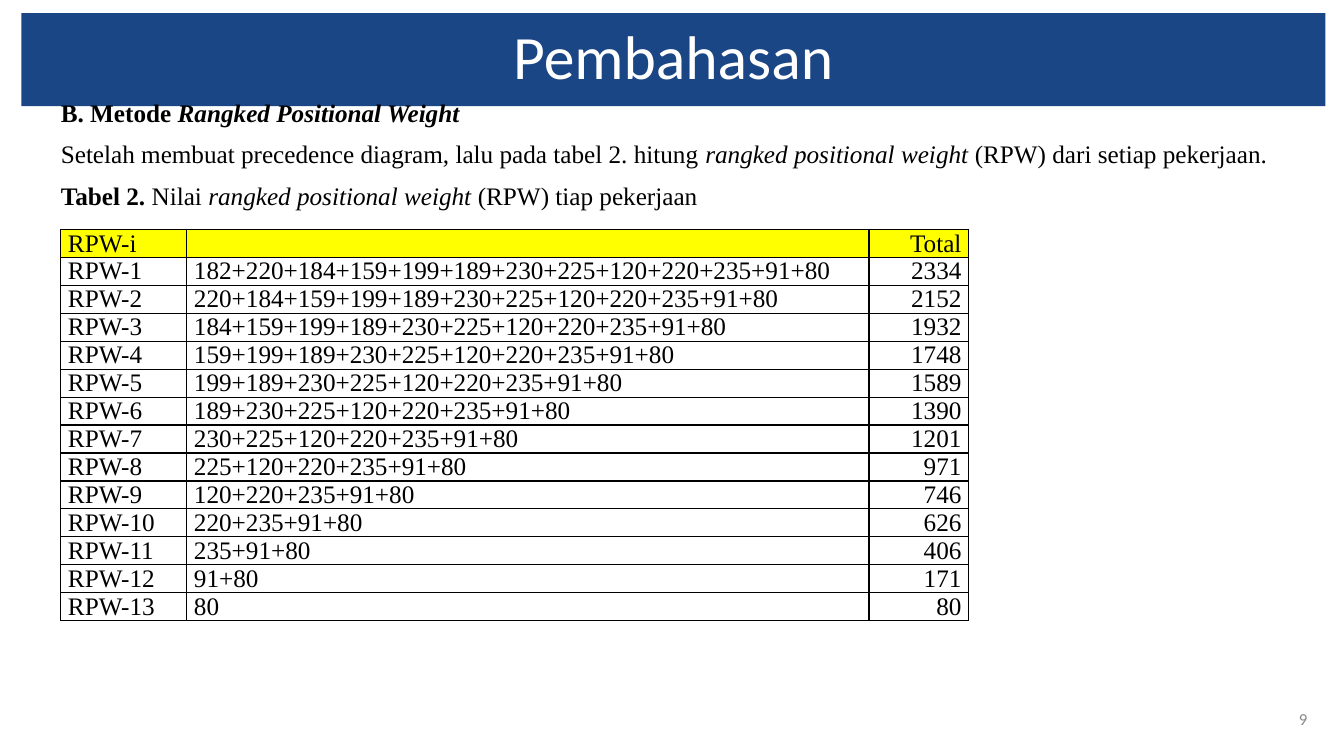
from lxml.etree import SubElement
from pptx import Presentation
from pptx.dml.color import RGBColor
from pptx.enum.text import MSO_ANCHOR, MSO_AUTO_SIZE, PP_ALIGN
from pptx.oxml.ns import qn
from pptx.util import Pt

COLORS = {"banner": "1B4685", "header": "FFFF00", "paper": "FFFFFF",
          "ink": "000000", "number": "888888"}
SERIF, SANS = "Times New Roman", "Calibri"
TASK_TIMES = [182, 220, 184, 159, 199, 189, 230, 225, 120, 220, 235, 91, 80]
INTRO = [
    [("B. Metode ", True, False), ("Rangked Positional Weight", True, True)],
    [("Setelah membuat precedence diagram, lalu pada tabel 2. hitung ", False, False),
     ("rangked positional weight ", False, True),
     ("(RPW) dari setiap pekerjaan.", False, False)],
    [("Tabel 2.", True, False), (" Nilai ", False, False),
     ("rangked positional weight ", False, True),
     ("(RPW) tiap pekerjaan", False, False)],
]


def rgb(name):
    """Return the named colour."""
    return RGBColor.from_string(COLORS[name])


def add_run(p, text, font, size, color, bold=False, italic=False):
    """Append one formatted run to a paragraph."""
    r = p.add_run()
    r.text = text
    r.font.name, r.font.size = font, Pt(size)
    r.font.bold, r.font.italic = bold, italic
    r.font.color.rgb = rgb(color)


def place(sp, x, y, w, h, anchor):
    """Move a text shape to its box and return its text frame."""
    sp.left, sp.top, sp.width, sp.height = Pt(x), Pt(y), Pt(w), Pt(h)
    tf = sp.text_frame
    tf.word_wrap = True
    tf.auto_size = MSO_AUTO_SIZE.NONE
    tf.vertical_anchor = anchor
    return tf


def add_title(s, x, y, w, h):
    """Set the title as a full-width banner."""
    sp = s.shapes.title
    sp.fill.solid()
    sp.fill.fore_color.rgb = rgb("banner")
    p = place(sp, x, y, w, h, MSO_ANCHOR.MIDDLE).paragraphs[0]
    p.alignment, p.line_spacing = PP_ALIGN.CENTER, 0.9
    add_run(p, "Pembahasan", SANS, 44, "paper")


def add_intro(s, x, y, w, h):
    """Fill the body placeholder with the method text and table caption."""
    tf = place(s.placeholders[1], x, y, w, h, MSO_ANCHOR.TOP)
    for i, runs in enumerate(INTRO):
        p = tf.add_paragraph() if i else tf.paragraphs[0]
        pPr = p._p.get_or_add_pPr()
        pPr.set("marL", str(Pt(21)))
        pPr.set("indent", "0")
        SubElement(pPr, qn("a:buNone"))
        p.line_spacing = 0.9
        p.space_before = Pt(10 if i else 0)
        for text, bold, italic in runs:
            add_run(p, text, SERIF, 18, "ink", bold, italic)


def add_borders(cell):
    """Draw thin lines on all four sides of a cell."""
    tcPr = cell._tc.get_or_add_tcPr()
    for i, side in enumerate(("lnL", "lnR", "lnT", "lnB")):
        ln = tcPr.makeelement(qn(f"a:{side}"), {"w": str(Pt(1))})
        fill = SubElement(ln, qn("a:solidFill"))
        SubElement(fill, qn("a:srgbClr"), val=COLORS["ink"])
        tcPr.insert(i, ln)


def add_weights(s, x, y, widths, row_h):
    """Add the table of positional weights, each a sum of the remaining times."""
    rows = [("RPW-i", "", "Total")]
    for i in range(len(TASK_TIMES)):
        rest = TASK_TIMES[i:]
        rows.append((f"RPW-{i + 1}", "+".join(map(str, rest)), str(sum(rest))))
    table = s.shapes.add_table(len(rows), len(widths), Pt(x), Pt(y),
                               Pt(sum(widths)), Pt(row_h * len(rows))).table
    table.first_row = table.horz_banding = False
    for col, width in zip(table.columns, widths):
        col.width = Pt(width)
    for i, row in enumerate(rows):
        table.rows[i].height = Pt(row_h)
        for j, text in enumerate(row):
            cell = table.cell(i, j)
            cell.margin_left = cell.margin_right = Pt(5.25)
            cell.margin_top = cell.margin_bottom = 0
            cell.vertical_anchor = MSO_ANCHOR.BOTTOM
            cell.fill.solid()
            cell.fill.fore_color.rgb = rgb("paper" if i else "header")
            add_borders(cell)
            p = cell.text_frame.paragraphs[0]
            p.alignment = PP_ALIGN.RIGHT if j == 2 else PP_ALIGN.LEFT
            add_run(p, text, SERIF, 18, "ink")


def add_page_number(s, x, y, w, h):
    """Add the slide number at the lower right."""
    sp = s.shapes.add_textbox(Pt(x), Pt(y), Pt(w), Pt(h))
    p = place(sp, x, y, w, h, MSO_ANCHOR.MIDDLE).paragraphs[0]
    p.alignment = PP_ALIGN.RIGHT
    add_run(p, "9", SANS, 12, "number")


def main():
    """Build and save the slide."""
    prs = Presentation()
    prs.slide_width, prs.slide_height = Pt(960), Pt(540)
    s = prs.slides.add_slide(prs.slide_layouts[1])
    add_title(s, 15.25, 9.4, 931.5, 66.5)
    add_intro(s, 15.25, 68.5, 931.5, 66.5)
    add_weights(s, 43.3, 163.7, (90, 487.5, 71.25), 19.95)
    add_page_number(s, 900, 499, 41, 28.75)
    prs.save("out.pptx")


if __name__ == "__main__":
    main()
